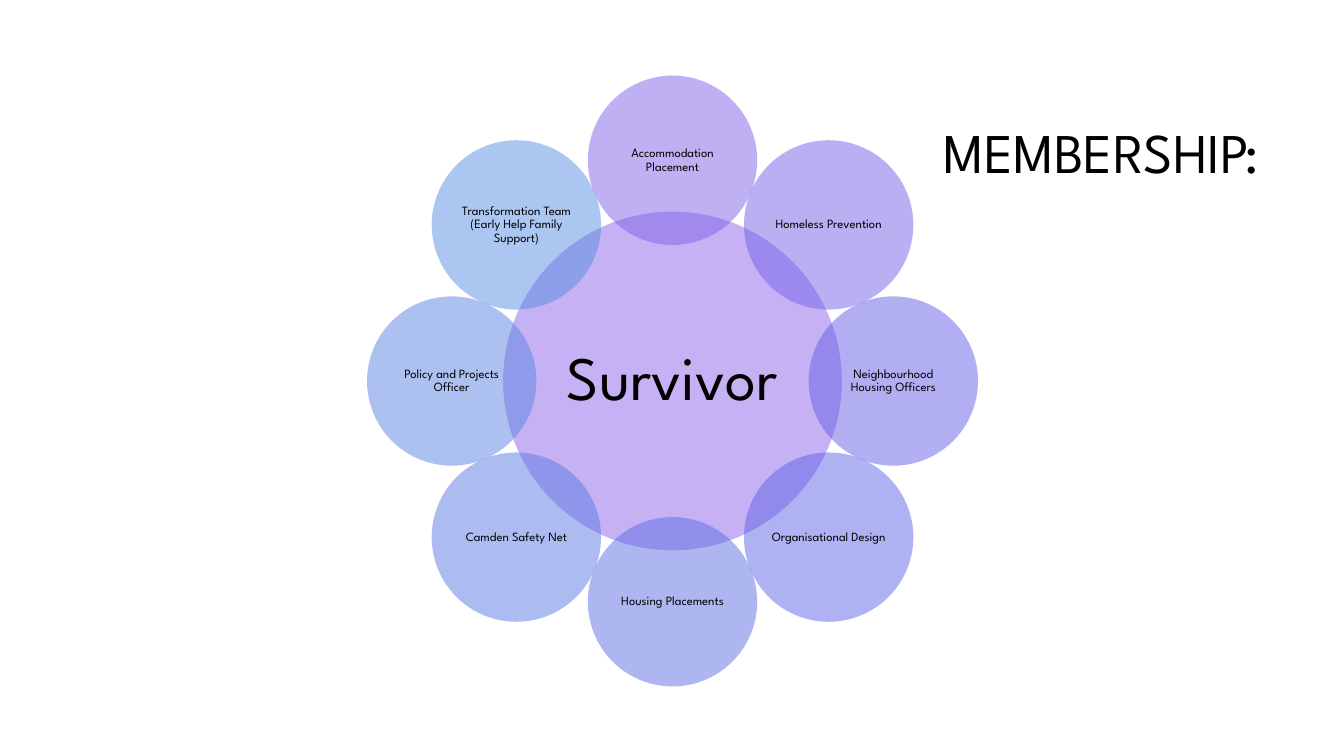
import math

from lxml import etree
from pptx import Presentation
from pptx.dml.color import RGBColor
from pptx.enum.shapes import MSO_SHAPE
from pptx.enum.text import MSO_ANCHOR, MSO_AUTO_SIZE, PP_ALIGN
from pptx.oxml.ns import qn
from pptx.util import Emu, Pt

OVAL = MSO_SHAPE.OVAL
MIDDLE = MSO_ANCHOR.MIDDLE
NO_AUTOFIT = MSO_AUTO_SIZE.NONE
CENTER, RIGHT = PP_ALIGN.CENTER, PP_ALIGN.RIGHT

EMU_PER_PX = 9144  # 100 px to the inch
SLIDE_WIDTH, SLIDE_HEIGHT = 1333, 750
TITLE_ONLY = 5

BLACK = RGBColor(0x00, 0x00, 0x00)
SURVIVOR_PURPLE = RGBColor(0x8D, 0x65, 0xEA)

# Team circles, clockwise from the top
TEAMS = [
    ("Accommodation Placement", RGBColor(0x80, 0x63, 0xE9)),
    ("Homeless Prevention", RGBColor(0x73, 0x62, 0xE8)),
    ("Neighbourhood Housing Officers", RGBColor(0x65, 0x60, 0xE7)),
    ("Organisational Design", RGBColor(0x5E, 0x65, 0xE6)),
    ("Housing Placements", RGBColor(0x5D, 0x6F, 0xE5)),
    ("Camden Safety Net", RGBColor(0x5B, 0x7A, 0xE4)),
    ("Policy and Projects Officer", RGBColor(0x5A, 0x84, 0xE3)),
    ("Transformation Team (Early Help Family Support)", RGBColor(0x58, 0x8F, 0xE2)),
]
CENTER_X, CENTER_Y = 667, 378
SURVIVOR_RADIUS, TEAM_RADIUS, RING_RADIUS = 168, 84, 219


def px(length):
    return Emu(round(length * EMU_PER_PX))


class SlideBuilder:
    font_name = "League Spartan"
    line_spacing = 0.9
    opacity_percent = 50

    def __init__(self, slide):
        self.slide = slide

    def set_text(self, shape, text, size, alignment):
        frame = shape.text_frame
        frame.word_wrap = True
        frame.auto_size = NO_AUTOFIT
        frame.vertical_anchor = MIDDLE
        frame.text = text
        paragraph = frame.paragraphs[0]
        paragraph.alignment = alignment
        paragraph.line_spacing = self.line_spacing
        paragraph.font.name = self.font_name
        paragraph.font.size = Pt(size)
        paragraph.font.color.rgb = BLACK

    def title(self, text, left, top, width, height, size):
        shape = self.slide.shapes.title
        shape.left, shape.top = px(left), px(top)
        shape.width, shape.height = px(width), px(height)
        self.set_text(shape, text, size, RIGHT)

    def circle(self, text, x, y, radius, color, size, inset):
        shape = self.slide.shapes.add_shape(
            OVAL, px(x - radius), px(y - radius), px(2 * radius), px(2 * radius))
        shape.shadow.inherit = False
        shape.fill.solid()
        shape.fill.fore_color.rgb = color
        shape.line.fill.background()
        color_element = shape.element.spPr.find(qn("a:solidFill"))[0]
        alpha = etree.SubElement(color_element, qn("a:alpha"))
        alpha.set("val", str(self.opacity_percent * 1000))
        frame = shape.text_frame
        frame.margin_left = frame.margin_right = px(inset)
        frame.margin_top = frame.margin_bottom = px(inset)
        self.set_text(shape, text, size, CENTER)


def main():
    presentation = Presentation()
    presentation.slide_width = px(SLIDE_WIDTH)
    presentation.slide_height = px(SLIDE_HEIGHT)
    layout = presentation.slide_layouts[TITLE_ONLY]
    builder = SlideBuilder(presentation.slides.add_slide(layout))

    # Heading
    builder.title("MEMBERSHIP:", 317, 84, 942, 141, size=40)

    # Survivor in the middle, teams evenly spaced around
    builder.circle("Survivor", CENTER_X, CENTER_Y, SURVIVOR_RADIUS,
                   SURVIVOR_PURPLE, size=44, inset=6)
    for index, (team, color) in enumerate(TEAMS):
        angle = 2 * math.pi * index / len(TEAMS)
        x = CENTER_X + RING_RADIUS * math.sin(angle)
        y = CENTER_Y - RING_RADIUS * math.cos(angle)
        builder.circle(team, x, y, TEAM_RADIUS, color, size=9, inset=1)

    presentation.save("out.pptx")


if __name__ == "__main__":
    main()
